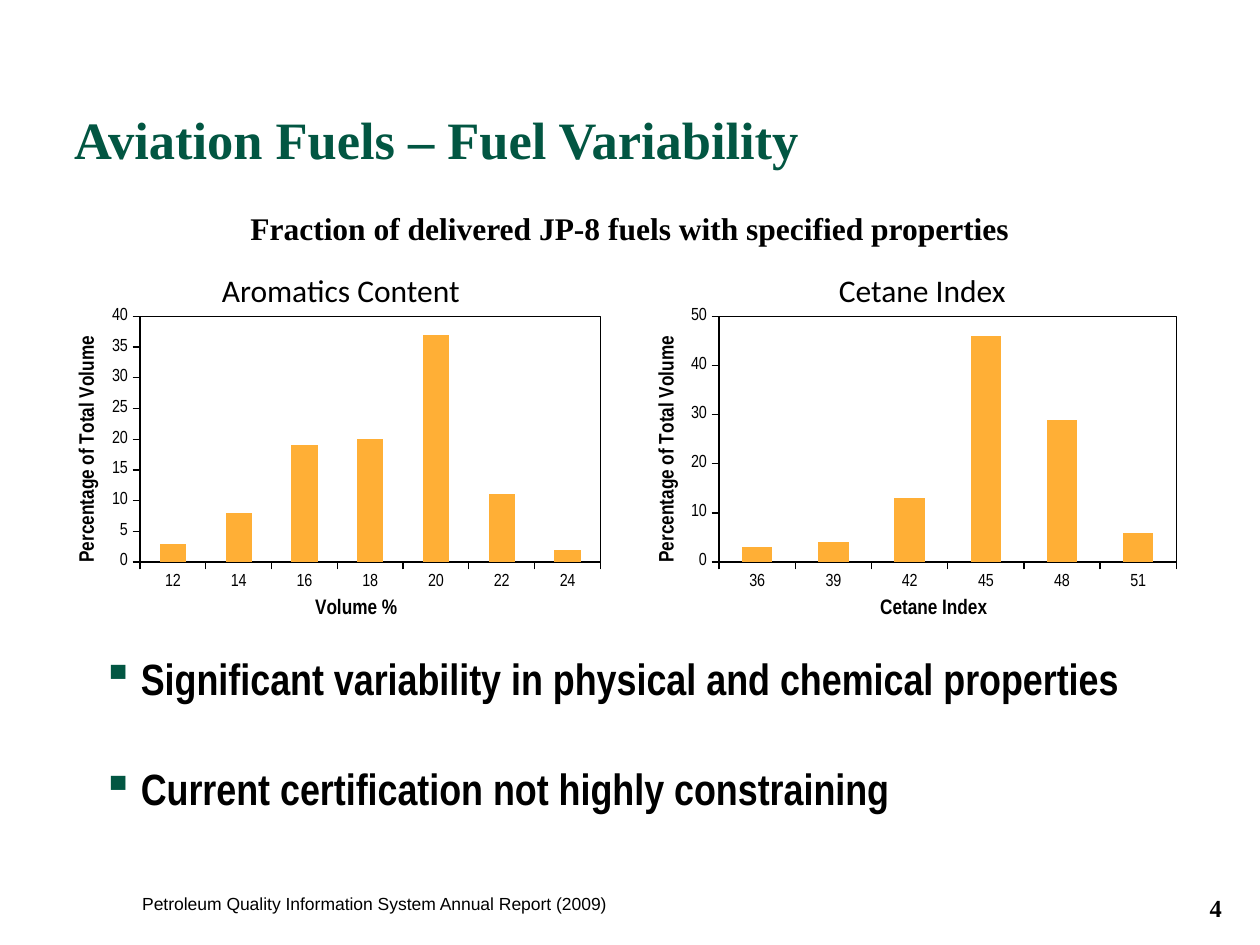
from lxml import etree
from pptx import Presentation
from pptx.chart.data import CategoryChartData
from pptx.dml.color import RGBColor
from pptx.enum.chart import XL_CHART_TYPE, XL_TICK_MARK
from pptx.enum.shapes import MSO_SHAPE
from pptx.enum.text import MSO_ANCHOR, PP_ALIGN
from pptx.oxml import parse_xml
from pptx.oxml.ns import nsdecls, qn
from pptx.util import Inches, Pt

COLUMNS = XL_CHART_TYPE.COLUMN_CLUSTERED
OUTSIDE, NO_TICK = XL_TICK_MARK.OUTSIDE, XL_TICK_MARK.NONE
RECTANGLE = MSO_SHAPE.RECTANGLE
TOP, MIDDLE = MSO_ANCHOR.TOP, MSO_ANCHOR.MIDDLE
LEFT, CENTER = PP_ALIGN.LEFT, PP_ALIGN.CENTER

BLACK, WHITE, GREEN, ORANGE = "000000", "FFFFFF", "025642", "FFAF36"
SERIF, NARROW, SANS, LABEL = "Times New Roman", "Arial Narrow", "Arial", "Calibri"


def rgb(value):
    return RGBColor.from_string(value)


def set_font(font, name, size, color=BLACK, bold=False):
    font.name, font.size, font.bold = name, Pt(size), bold
    font.color.rgb = rgb(color)


def write(frame, text, font=SERIF, size=18, color=BLACK, bold=False,
          align=LEFT, anchor=TOP, wrap=True):
    """Put one paragraph of text into a text frame."""
    frame.word_wrap = wrap
    frame.vertical_anchor = anchor
    paragraph = frame.paragraphs[0]
    paragraph.text = text
    paragraph.alignment = align
    set_font(paragraph.runs[0].font, font, size, color, bold)


def add_bullet(paragraph, color, indent):
    properties = paragraph._p.get_or_add_pPr()
    properties.set("marL", str(Inches(indent)))
    properties.set("indent", str(-Inches(indent)))
    bullet_color = etree.SubElement(properties, qn("a:buClr"))
    etree.SubElement(bullet_color, qn("a:srgbClr"), val=color)
    etree.SubElement(properties, qn("a:buChar"), char="▪")


class SlideBuilder:
    def __init__(self, presentation):
        self.slide = presentation.slides.add_slide(presentation.slide_layouts[6])

    def text(self, box, text, **style):
        shape = self.slide.shapes.add_textbox(*map(Inches, box))
        write(shape.text_frame, text, **style)

    def panel(self, box, text, **style):
        shape = self.slide.shapes.add_shape(RECTANGLE, *map(Inches, box))
        shape.shadow.inherit = False
        shape.fill.solid()
        shape.fill.fore_color.rgb = rgb(WHITE)
        shape.line.fill.background()
        write(shape.text_frame, text, **style)

    def bullets(self, box, items, gap):
        frame = self.slide.shapes.add_textbox(*map(Inches, box)).text_frame
        frame.word_wrap = True
        for index, item in enumerate(items):
            paragraph = frame.add_paragraph() if index else frame.paragraphs[0]
            paragraph.text = item
            if index:
                paragraph.space_before = Pt(gap)
            add_bullet(paragraph, GREEN, 0.31)
            set_font(paragraph.runs[0].font, NARROW, 25, bold=True)

    def column_chart(self, box, categories, values, category_title, maximum, step):
        data = CategoryChartData(number_format="#,##0")
        data.categories = categories
        data.add_series("Series 1", values)
        chart = self.slide.shapes.add_chart(COLUMNS, *map(Inches, box), data).chart
        chart.has_legend = chart.has_title = False
        set_font(chart.font, NARROW, 10)

        plot = chart.plots[0]
        plot.gap_width = 150
        plot.vary_by_categories = False
        fill = plot.series[0].format.fill
        fill.solid()
        fill.fore_color.rgb = rgb(ORANGE)

        self.axis(chart.category_axis, category_title)
        self.axis(chart.value_axis, "Percentage of Total Volume", rotation=-90)
        chart.value_axis.minimum_scale = 0
        chart.value_axis.maximum_scale = maximum
        chart.value_axis.major_unit = step
        self.frame_plot(chart, x=0.125, y=0.051, w=0.844, h=0.756)

    def axis(self, axis, title, rotation=0):
        axis.has_major_gridlines = False
        axis.major_tick_mark, axis.minor_tick_mark = OUTSIDE, NO_TICK
        axis.format.line.color.rgb = rgb(BLACK)
        axis.format.line.width = Pt(0.75)
        frame = axis.axis_title.text_frame
        frame.text = title
        frame._txBody.bodyPr.set("rot", str(rotation * 60000))
        set_font(frame.paragraphs[0].runs[0].font, NARROW, 12, bold=True)

    def frame_plot(self, chart, **position):
        """Fix the inner plot area and outline it."""
        area = chart._chartSpace.chart.plotArea
        for old in area.findall(qn("c:layout")):
            area.remove(old)
        modes = "".join(f'<c:{key}Mode val="edge"/>' for key in "xy")
        sizes = "".join(f'<c:{key} val="{value}"/>' for key, value in position.items())
        area.insert(0, parse_xml(
            f'<c:layout {nsdecls("c")}><c:manualLayout><c:layoutTarget val="inner"/>'
            f'{modes}{sizes}</c:manualLayout></c:layout>'))
        area.append(parse_xml(
            f'<c:spPr {nsdecls("c", "a")}><a:noFill/><a:ln w="{Pt(0.75)}"><a:solidFill>'
            f'<a:srgbClr val="{BLACK}"/></a:solidFill></a:ln></c:spPr>'))


def main():
    presentation = Presentation()
    presentation.slide_width, presentation.slide_height = Inches(10), Inches(7.5)
    builder = SlideBuilder(presentation)

    # Heading
    builder.text((0.49, 0.75, 8.9, 0.7), "Aviation Fuels – Fuel Variability",
                 size=30, color=GREEN, bold=True, anchor=MIDDLE)
    builder.panel((1.86, 1.61, 6.28, 0.4),
                  "Fraction of delivered JP-8 fuels with specified properties",
                  bold=True, align=CENTER)

    # Charts with their captions
    builder.column_chart((0.57, 2.38, 4.33, 2.58), ["12", "14", "16", "18", "20", "22", "24"],
                         [3, 8, 19, 20, 37, 11, 2], "Volume %", maximum=40, step=5)
    builder.column_chart((5.17, 2.38, 4.3, 2.58), ["36", "39", "42", "45", "48", "51"],
                         [3, 4, 13, 46, 29, 6], "Cetane Index", maximum=50, step=10)
    for box, caption in (((1.62, 2.1, 2.17, 0.4), "Aromatics Content"),
                         ((6.52, 2.1, 1.6, 0.4), "Cetane Index")):
        builder.text(box, caption, font=LABEL, align=CENTER, wrap=False)

    # Findings
    builder.bullets((0.71, 5.12, 8.52, 1.61),
                    ["Significant variability in physical and chemical properties",
                     "Current certification not highly constraining"], gap=33)

    # Source and page number
    builder.text((1.03, 7.04, 3.92, 0.27),
                 "Petroleum Quality Information System Annual Report (2009)",
                 font=SANS, size=10, wrap=False)
    builder.text((9.4, 7.04, 0.5, 0.33), "4", size=14, bold=True, align=CENTER)

    presentation.save("out.pptx")


if __name__ == "__main__":
    main()
